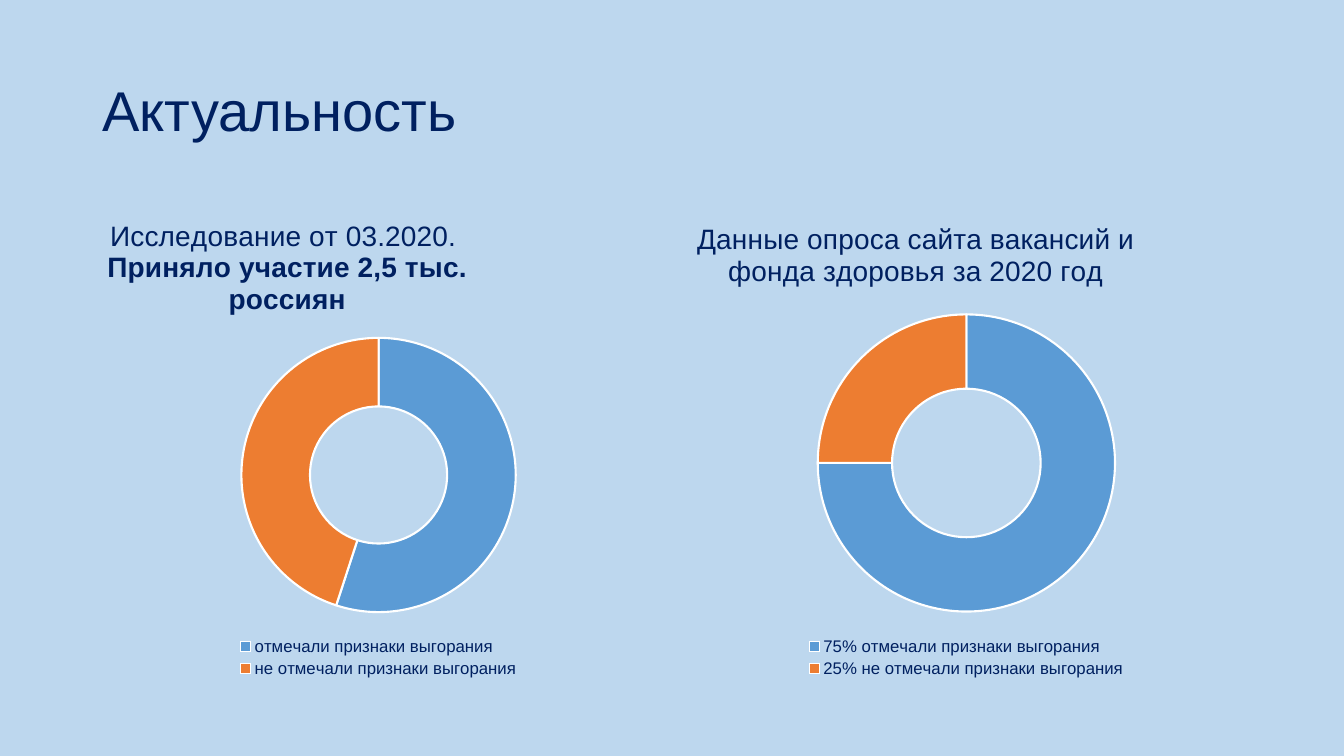
"""Builds a slide with two doughnut charts on burnout surveys."""
from lxml import etree
from pptx import Presentation
from pptx.chart.data import CategoryChartData
from pptx.dml.color import RGBColor
from pptx.enum.chart import XL_CHART_TYPE, XL_LEGEND_POSITION
from pptx.enum.text import MSO_ANCHOR
from pptx.oxml.ns import qn
from pptx.util import Inches, Pt

DOUGHNUT = XL_CHART_TYPE.DOUGHNUT
BOTTOM = XL_LEGEND_POSITION.BOTTOM
MIDDLE = MSO_ANCHOR.MIDDLE

SKY = RGBColor(0xBD, 0xD7, 0xEE)
NAVY = RGBColor(0x00, 0x20, 0x60)
BLUE = RGBColor(0x5B, 0x9B, 0xD5)
ORANGE = RGBColor(0xED, 0x7D, 0x31)
WHITE = RGBColor(0xFF, 0xFF, 0xFF)
FONT = "Arial"

SURVEYS = [
    {
        "left": 0.92,
        "title": [("Исследование от 03.2020. ", False),
                  ("Приняло участие 2,5 тыс. россиян", True)],
        "series": "Series 1",
        "cats": ["отмечали признаки выгорания", "не отмечали признаки выгорания"],
        "values": [55, 45],
        "title_at": {"x": 0.02, "y": 0.03},
        "plot_at": {"x": 0.26, "y": 0.28, "w": 0.48, "h": 0.58},
        "legend_at": {"x": 0.25, "y": 0.9, "w": 0.5, "h": 0.1},
    },
    {
        "left": 6.75,
        "title": [("Данные опроса сайта вакансий и фонда здоровья за 2020 год", False)],
        "series": "Данные опроса сайта вакансий и фонда здоровья за 2020 год",
        "cats": ["75% отмечали признаки выгорания", "25% не отмечали признаки выгорания"],
        "values": [75, 25],
        "title_at": {"x": 0.02, "y": 0.03},
        "plot_at": {"x": 0.24, "y": 0.23, "w": 0.52, "h": 0.63},
        "legend_at": {"x": 0.21, "y": 0.9, "w": 0.58, "h": 0.1},
    },
]


def set_font(font, size, bold=False):
    """Apply the slide's typeface and text colour."""
    font.name = FONT
    font.size = Pt(size)
    font.bold = bold
    font.color.rgb = NAVY


def place(parent, position, after=None):
    """Give a chart part a manual layout in fractions of the chart."""
    for old in parent.findall(qn("c:layout")):
        parent.remove(old)
    layout = etree.Element(qn("c:layout"))
    manual = etree.SubElement(layout, qn("c:manualLayout"))
    if after is None:
        etree.SubElement(manual, qn("c:layoutTarget"), val="inner")
        parent.insert(0, layout)
    else:
        parent.find(qn(after)).addnext(layout)
    for key in ("x", "y"):
        etree.SubElement(manual, qn(f"c:{key}Mode"), val="edge")
    for key, value in position.items():
        etree.SubElement(manual, qn(f"c:{key}"), val=str(value))


def add_title(slide, text):
    """Add the slide heading."""
    box = slide.shapes.add_textbox(Inches(0.92), Inches(0.4), Inches(11.5), Inches(1.45))
    tf = box.text_frame
    tf.word_wrap = True
    tf.vertical_anchor = MIDDLE
    p = tf.paragraphs[0]
    p.text = text
    p.line_spacing = 0.9
    set_font(p.font, 40)


def add_chart_title(chart, lines, position):
    """Add the chart heading, one paragraph per line."""
    chart.has_title = True
    title = chart.chart_title
    tf = title.text_frame
    for i, (text, bold) in enumerate(lines):
        p = tf.add_paragraph() if i else tf.paragraphs[0]
        r = p.add_run()
        r.text = text
        set_font(p.font, 20, bold)
        set_font(r.font, 20, bold)
    place(title._element, position, "c:tx")


def add_legend(chart, position):
    """Add the legend below the doughnut."""
    chart.has_legend = True
    legend = chart.legend
    legend.position = BOTTOM
    legend.include_in_layout = False
    set_font(legend.font, 12)
    place(legend._element, position, "c:legendPos")


def add_doughnut(slide, survey):
    """Add one survey as a doughnut chart."""
    data = CategoryChartData()
    data.categories = survey["cats"]
    data.add_series(survey["series"], survey["values"])
    chart = slide.shapes.add_chart(DOUGHNUT, Inches(survey["left"]), Inches(2),
                                   Inches(5.67), Inches(4.76), data).chart
    set_font(chart.font, 10)
    add_chart_title(chart, survey["title"], survey["title_at"])
    add_legend(chart, survey["legend_at"])
    plot = chart.plots[0]
    plot.vary_by_categories = True
    plot.has_data_labels = False
    plot._element.find(qn("c:holeSize")).set("val", "75")
    for i, color in enumerate((BLUE, ORANGE)):
        fmt = plot.series[0].points[i].format
        fmt.fill.solid()
        fmt.fill.fore_color.rgb = color
        fmt.line.color.rgb = WHITE
        fmt.line.width = Pt(1.5)
    place(plot._element.getparent(), survey["plot_at"])


def main():
    """Build and save the slide."""
    prs = Presentation()
    prs.slide_width = Inches(13.33)
    prs.slide_height = Inches(7.5)
    slide = prs.slides.add_slide(prs.slide_layouts[6])
    fill = slide.background.fill
    fill.solid()
    fill.fore_color.rgb = SKY
    add_title(slide, "Актуальность")
    for survey in SURVEYS:
        add_doughnut(slide, survey)
    prs.save("out.pptx")


if __name__ == "__main__":
    main()
